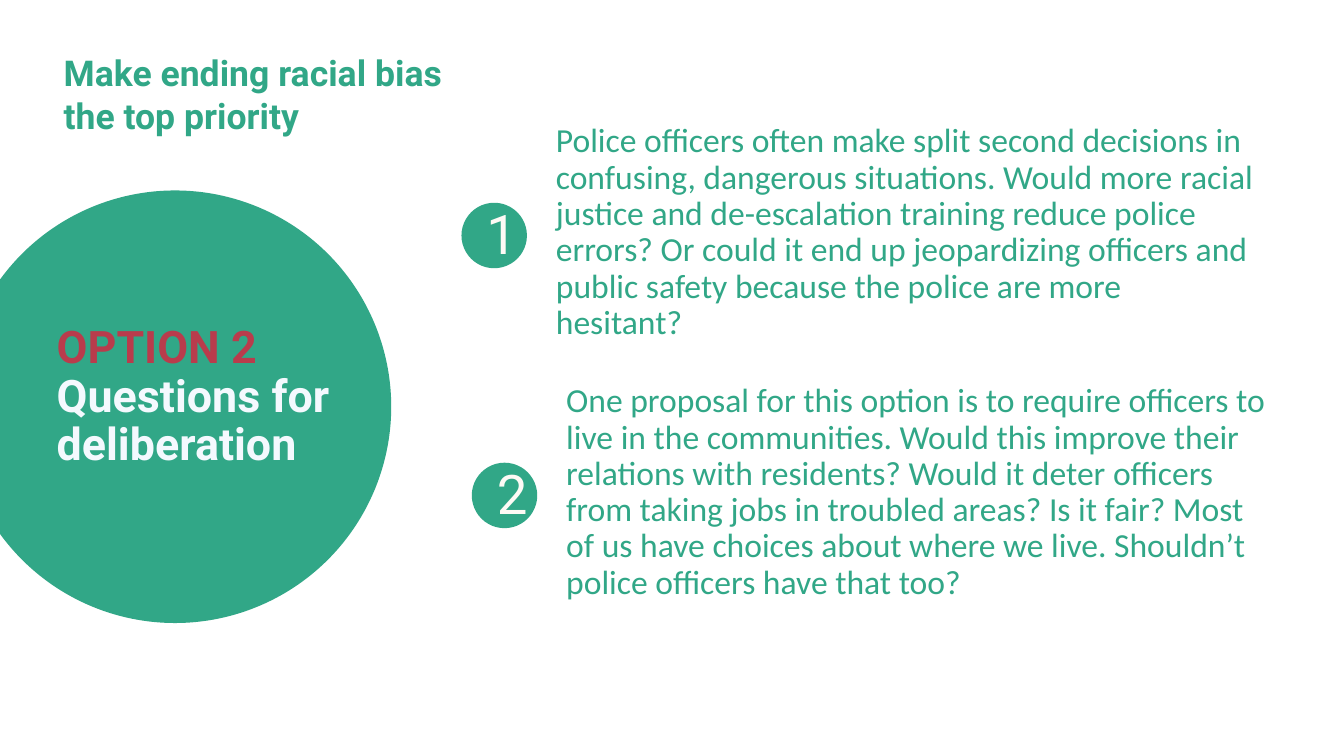
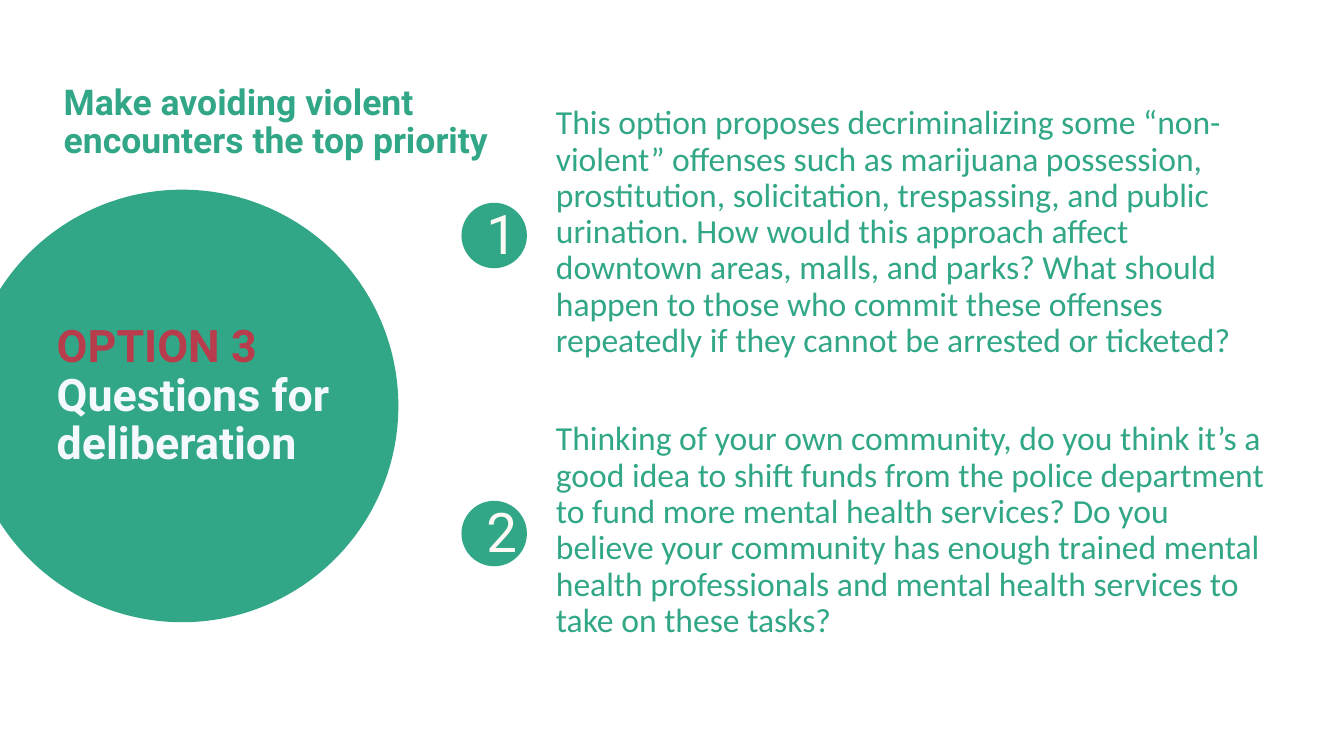
from pptx import Presentation
from pptx.dml.color import RGBColor
from pptx.enum.shapes import MSO_SHAPE
from pptx.enum.text import MSO_ANCHOR, MSO_AUTO_SIZE, PP_ALIGN
from pptx.util import Cm, Pt

GREEN, RED, ICE, CREAM = "31A787", "B93C4C", "F4F9FE", "FDFAF5"
HEADING_FONT, BODY_FONT = "Roboto", "Calibri"
MARGIN = 1.35
DISC_SIZE = 10.9
BADGE_SIZE = 1.65
BADGE_LEFT, BADGE_TOP = 11.63, 5.11

SLIDES = [
    {
        "title": "Make ending racial bias the top priority",
        "title_top": 0.18, "title_spacing": 1.0,
        "option": "OPTION 2", "disc": (-1.04, 4.8),
        "questions": [
            (BADGE_LEFT, BADGE_TOP, 18.08,
             "Police officers often make split second decisions in confusing, "
             "dangerous situations. Would more racial justice and de-escalation "
             "training reduce police errors? Or could it end up jeopardizing "
             "officers and public safety because the police are more hesitant?"),
            (11.89, 11.66, 18.47,
             "One proposal for this option is to require officers to live in the "
             "communities. Would this improve their relations with residents? "
             "Would it deter officers from taking jobs in troubled areas? Is it "
             "fair? Most of us have choices about where we live. Shouldn’t police "
             "officers have that too?"),
        ],
    },
    {
        "title": "Make avoiding violent encounters the top priority",
        "title_top": 0.81, "title_spacing": 0.9,
        "option": "OPTION 3", "disc": (-0.86, 4.78),
        "questions": [
            (BADGE_LEFT, BADGE_TOP, 18.08,
             "This option proposes decriminalizing some “non-violent” offenses "
             "such as marijuana possession, prostitution, solicitation, "
             "trespassing, and public urination. How would this approach affect "
             "downtown areas, malls, and parks? What should happen to those who "
             "commit these offenses repeatedly if they cannot be arrested or "
             "ticketed?"),
            (BADGE_LEFT, 12.62, 18.47,
             "Thinking of your own community, do you think it’s a good idea to "
             "shift funds from the police department to fund more mental health "
             "services? Do you believe your community has enough trained mental "
             "health professionals and mental health services to take on these "
             "tasks?"),
        ],
    },
]


def rgb(color):
    return RGBColor.from_string(color)


def place(sp, left, top, width, height):
    sp.left, sp.top, sp.width, sp.height = map(Cm, (left, top, width, height))


def style(p, font, size, color, bold=False, spacing=1.0):
    p.font.name, p.font.size, p.font.bold = font, Pt(size), bold
    p.font.color.rgb = rgb(color)
    p.line_spacing = spacing
    p.alignment = PP_ALIGN.LEFT


def add_circle(s, left, top, size):
    sp = s.shapes.add_shape(MSO_SHAPE.OVAL, *map(Cm, (left, top, size, size)))
    sp.fill.solid()
    sp.fill.fore_color.rgb = rgb(GREEN)
    sp.line.fill.background()
    sp.shadow.inherit = False


def add_text_box(s, left, top, width, height, anchor=MSO_ANCHOR.MIDDLE):
    tf = s.shapes.add_textbox(*map(Cm, (left, top, width, height))).text_frame
    tf.word_wrap = True
    tf.vertical_anchor = anchor
    return tf


def add_title(s, text, top, spacing):
    place(s.shapes.title, MARGIN, top, 11.25, 3.38)
    tf = s.shapes.title.text_frame
    tf.text = text
    tf.auto_size = MSO_AUTO_SIZE.NONE
    tf.vertical_anchor = MSO_ANCHOR.BOTTOM
    style(tf.paragraphs[0], HEADING_FONT, 25.4, GREEN, True, spacing)


def add_option_disc(s, option, left, top):
    add_circle(s, left, top, DISC_SIZE)
    tf = add_text_box(s, MARGIN, top + 3.31, 9.35, 3.84, MSO_ANCHOR.TOP)
    tf.margin_left = tf.margin_top = tf.margin_right = tf.margin_bottom = Cm(0.08)
    tf.text = f"{option}\nQuestions for deliberation"
    for p, color in zip(tf.paragraphs, (RED, ICE)):
        style(p, HEADING_FONT, 32, color, True, 0.9)


def add_question(s, number, left, top, width, text):
    """Place a numbered badge at left, top with the question centred beside it."""
    add_circle(s, left, top, BADGE_SIZE)
    middle = top + BADGE_SIZE / 2 - 0.07

    tf = add_text_box(s, left + 0.38, middle - 1.27, BADGE_SIZE, 2.54)
    tf.text = str(number)
    style(tf.paragraphs[0], HEADING_FONT, 39, CREAM)

    tf = add_text_box(s, left + 2.13, middle - 3.4, width, 6.8)
    tf.text = text
    style(tf.paragraphs[0], BODY_FONT, 24, GREEN, spacing=0.9)


def add_option_slide(prs, content):
    s = prs.slides.add_slide(prs.slide_layouts[5])
    add_title(s, content["title"], content["title_top"], content["title_spacing"])
    add_option_disc(s, content["option"], *content["disc"])
    for number, question in enumerate(content["questions"], 1):
        add_question(s, number, *question)


def main():
    prs = Presentation()
    prs.slide_width, prs.slide_height = Cm(33.87), Cm(19.05)
    for content in SLIDES:
        add_option_slide(prs, content)
    prs.save("out.pptx")


if __name__ == "__main__":
    main()
